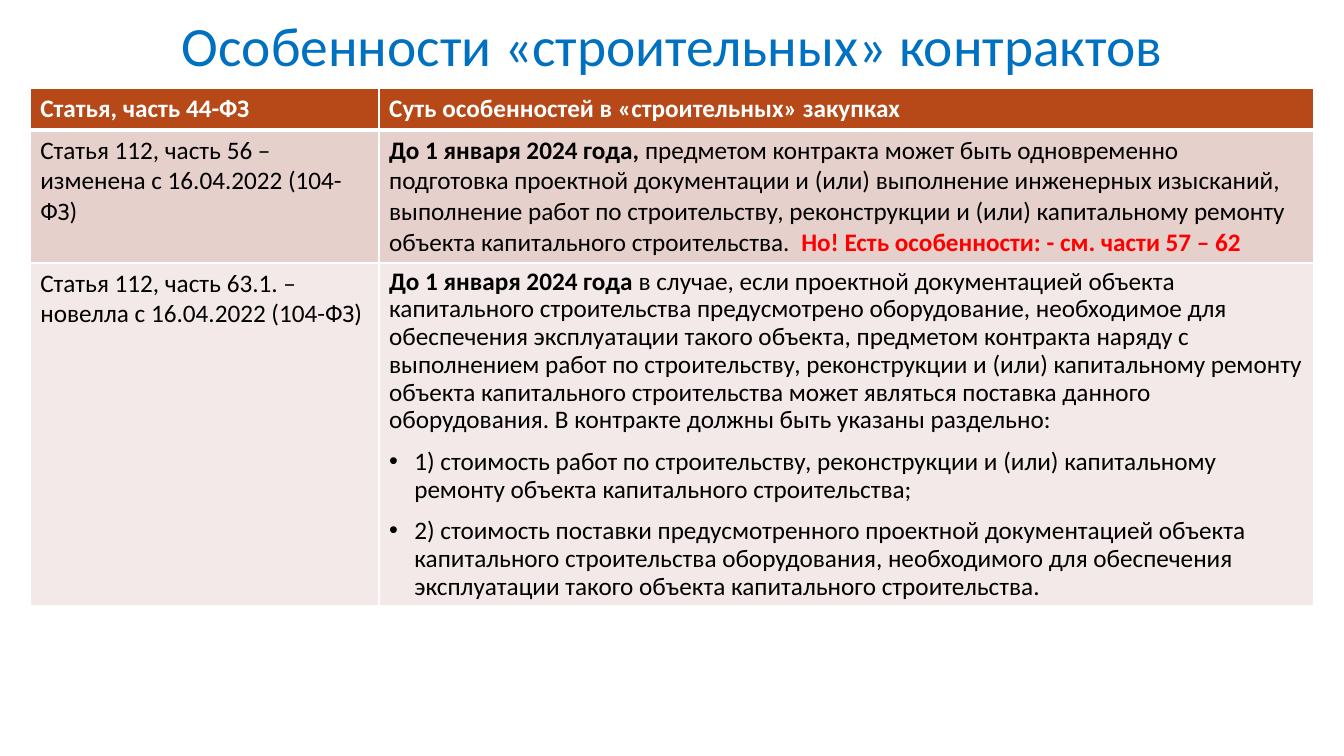
from lxml import etree
from pptx import Presentation
from pptx.dml.color import RGBColor
from pptx.enum import text
from pptx.oxml import ns
from pptx.util import Inches, Pt

FONT = "Calibri"
BLUE = RGBColor(0x00, 0x70, 0xC0)
RUST = RGBColor(0xB7, 0x49, 0x19)
ROSE = RGBColor(0xE6, 0xD0, 0xCC)
PALE = RGBColor(0xF3, 0xE9, 0xE8)
WHITE = RGBColor(0xFF, 0xFF, 0xFF)
BLACK = RGBColor(0x00, 0x00, 0x00)
RED = RGBColor(0xFF, 0x00, 0x00)

COL_WIDTHS = (3.46, 9.27)
ROW_HEIGHTS = (0.41, 1.32, 3.4)
ROW_FILLS = (RUST, ROSE, PALE)

HEADER = ("Статья, часть 44-ФЗ", "Суть особенностей в «строительных» закупках")
ARTICLES = (
    "Статья 112, часть 56 – изменена с 16.04.2022 (104-ФЗ)",
    "Статья 112, часть 63.1. – новелла с 16.04.2022 (104-ФЗ)",
)
DESIGN_AND_BUILD = (
    ("До 1 января 2024 года, ", True, BLACK),
    ("предметом контракта может быть одновременно подготовка проектной "
     "документации и (или) выполнение инженерных изысканий, выполнение работ "
     "по строительству, реконструкции и (или) капитальному ремонту объекта "
     "капитального строительства.  ", False, BLACK),
    ("Но! Есть особенности: - см. части 57 – 62", True, RED),
)
EQUIPMENT = (
    ("До 1 января 2024 года ", True, BLACK),
    ("в случае, если проектной документацией объекта капитального "
     "строительства предусмотрено оборудование, необходимое для обеспечения "
     "эксплуатации такого объекта, предметом контракта наряду с выполнением "
     "работ по строительству, реконструкции и (или) капитальному ремонту "
     "объекта капитального строительства может являться поставка данного "
     "оборудования. В контракте должны быть указаны раздельно:", False, BLACK),
)
SEPARATE_COSTS = (
    "1) стоимость работ по строительству, реконструкции и (или) капитальному "
    "ремонту объекта капитального строительства;",
    "2) стоимость поставки предусмотренного проектной документацией объекта "
    "капитального строительства оборудования, необходимого для обеспечения "
    "эксплуатации такого объекта капитального строительства.",
)


def add_run(p, content, bold=False, color=BLACK, size=18):
    r = p.add_run()
    r.text = content
    r.font.name = FONT
    r.font.size = Pt(size)
    r.font.bold = bold
    r.font.color.rgb = color


def fill_paragraph(p, runs, spaced=False):
    for run in runs:
        add_run(p, *run)
    if spaced:
        p.line_spacing = 0.9
        p.space_before = Pt(10)


def add_bullet(p):
    pPr = p._p.get_or_add_pPr()
    pPr.set("marL", str(Inches(0.25)))
    pPr.set("indent", str(Inches(-0.25)))
    etree.SubElement(pPr, ns.qn("a:buFont")).set("typeface", "Arial")
    etree.SubElement(pPr, ns.qn("a:buChar")).set("char", "•")


def set_borders(cell, top, bottom):
    tcPr = cell._tc.get_or_add_tcPr()
    widths = (("lnL", 1), ("lnR", 1), ("lnT", top), ("lnB", bottom))
    for i, (side, width) in enumerate(widths):
        ln = etree.Element(ns.qn(f"a:{side}"), w=str(Pt(width)))
        fill = etree.SubElement(ln, ns.qn("a:solidFill"))
        etree.SubElement(fill, ns.qn("a:srgbClr")).set("val", str(WHITE))
        tcPr.insert(i, ln)


def add_title(s, title):
    sp = s.shapes.add_textbox(Inches(0.92), Inches(0.24), Inches(11.5), Inches(0.49))
    tf = sp.text_frame
    tf.word_wrap = True
    tf.vertical_anchor = text.MSO_ANCHOR.MIDDLE
    p = tf.paragraphs[0]
    p.alignment = text.PP_ALIGN.CENTER
    p.line_spacing = 0.9
    add_run(p, title, color=BLUE, size=39.6)


def add_grid(s):
    table = s.shapes.add_table(
        len(ROW_HEIGHTS), len(COL_WIDTHS), Inches(0.3), Inches(0.88),
        Inches(sum(COL_WIDTHS)), Inches(sum(ROW_HEIGHTS))).table
    for column, width in zip(table.columns, COL_WIDTHS):
        column.width = Inches(width)
    for i, (row, height) in enumerate(zip(table.rows, ROW_HEIGHTS)):
        row.height = Inches(height)
        for cell in row.cells:
            cell.fill.solid()
            cell.fill.fore_color.rgb = ROW_FILLS[i]
            set_borders(cell, 3 if i == 1 else 1, 3 if i == 0 else 1)
    return table


def fill_grid(table):
    for col, heading in enumerate(HEADER):
        p = table.cell(0, col).text_frame.paragraphs[0]
        add_run(p, heading, True, WHITE)
    for row, article in enumerate(ARTICLES, 1):
        add_run(table.cell(row, 0).text_frame.paragraphs[0], article)
    fill_paragraph(table.cell(1, 1).text_frame.paragraphs[0], DESIGN_AND_BUILD)
    tf = table.cell(2, 1).text_frame
    fill_paragraph(tf.paragraphs[0], EQUIPMENT, spaced=True)
    for cost in SEPARATE_COSTS:
        p = tf.add_paragraph()
        fill_paragraph(p, [(cost,)], spaced=True)
        add_bullet(p)


def main():
    prs = Presentation()
    prs.slide_width = Inches(13.33)
    prs.slide_height = Inches(7.5)
    s = prs.slides.add_slide(prs.slide_layouts[6])
    add_title(s, "Особенности «строительных» контрактов")
    fill_grid(add_grid(s))
    prs.save("out.pptx")


if __name__ == "__main__":
    main()
